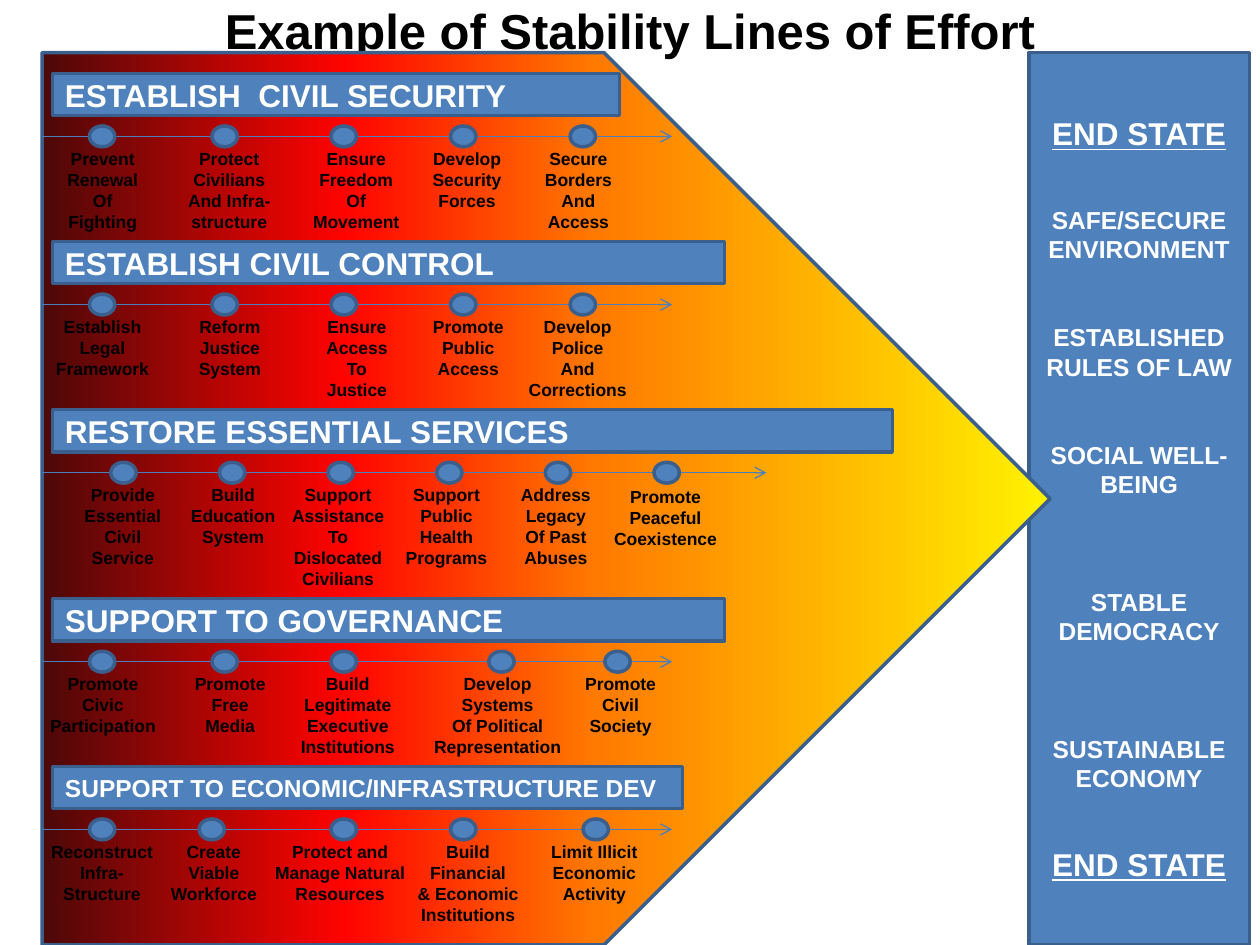
"""Build the slide of stability lines of effort."""
from dataclasses import dataclass

from lxml import etree
from pptx import Presentation
from pptx.dml.color import RGBColor
from pptx.enum.shapes import MSO_CONNECTOR, MSO_SHAPE
from pptx.enum.text import MSO_ANCHOR, MSO_AUTO_SIZE, PP_ALIGN
from pptx.oxml.ns import qn
from pptx.shapes.autoshape import Shape
from pptx.shapes.shapetree import SlideShapes
from pptx.text.text import TextFrame
from pptx.util import Cm, Pt

RECT, OVAL, PENTAGON = MSO_SHAPE.RECTANGLE, MSO_SHAPE.OVAL, MSO_SHAPE.PENTAGON
STRAIGHT = MSO_CONNECTOR.STRAIGHT
LEFT, CENTER = PP_ALIGN.LEFT, PP_ALIGN.CENTER
TOP, MIDDLE = MSO_ANCHOR.TOP, MSO_ANCHOR.MIDDLE
FIT = MSO_AUTO_SIZE.SHAPE_TO_FIT_TEXT

FONT = "Arial"
BLUE, EDGE, THREAD = "4F81BD", "3A5F8C", "4B7EBC"
BLACK, WHITE = "000000", "FFFFFF"
HEAT = [(0, "FFF200"), (45, "FF7A00"), (70, "FF0300"), (100, "4D0808")]

ARROW_LEFT, ARROW_TOP, ARROW_HEIGHT = 0.85, 1.06, 17.99
BAR_LEFT, BAR_HEIGHT = 1.06, 0.85
DOT_WIDTH, DOT_HEIGHT = 0.51, 0.42
LINE_DROP, LABEL_DROP = 1.27, 1.38


@dataclass
class Step:
    """A dot on a line, with the label under it."""
    dot: float
    left: float
    width: float
    text: str
    drop: float = LABEL_DROP


@dataclass
class Effort:
    """A titled line of effort and its steps."""
    top: float
    width: float
    title: str
    steps: list[Step]
    size: int = 18
    length: float = 12.7


@dataclass
class Goal:
    """A paragraph of the end state panel."""
    text: str
    before: float = 0
    size: int = 14
    underline: bool = False


EFFORTS = [
    Effort(1.48, 11.43, "ESTABLISH  CIVIL SECURITY", [
        Step(2.06, 1.09, 1.96, "Prevent\nRenewal\nOf\nFighting"),
        Step(4.53, 3.53, 2.18, "Protect\nCivilians\nAnd Infra-\nstructure"),
        Step(6.93, 6.05, 2.26, "Ensure\nFreedom\nOf\nMovement"),
        Step(9.34, 8.46, 1.91, "Develop\nSecurity\nForces"),
        Step(11.75, 10.72, 1.88, "Secure\nBorders\nAnd\nAccess")]),
    Effort(4.87, 13.55, "ESTABLISH CIVIL CONTROL", [
        Step(2.06, 0.86, 2.41, "Establish\nLegal\nFramework"),
        Step(4.53, 3.76, 1.75, "Reform\nJustice\nSystem"),
        Step(6.93, 6.32, 1.75, "Ensure\nAccess\nTo\nJustice"),
        Step(9.34, 8.46, 1.96, "Promote\nPublic\nAccess"),
        Step(11.75, 10.39, 2.51, "Develop\nPolice\nAnd\nCorrections")]),
    Effort(8.26, 16.93, "RESTORE ESSENTIAL SERVICES", [
        Step(2.49, 1.42, 2.11, "Provide\nEssential\nCivil\nService"),
        Step(4.68, 3.58, 2.24, "Build\nEducation\nSystem"),
        Step(6.87, 5.56, 2.51, "Support\nAssistance\nTo\nDislocated\nCivilians"),
        Step(9.06, 7.92, 2.16, "Support\nPublic\nHealth\nPrograms"),
        Step(11.25, 10.24, 1.93, "Address\nLegacy\nOf Past\nAbuses"),
        Step(13.44, 12.12, 2.59, "Promote\nPeaceful\nCoexistence", 1.42)],
        length=14.6),
    Effort(12.07, 13.55, "SUPPORT TO GOVERNANCE", [
        Step(2.06, 0.74, 2.67, "Promote\nCivic\nParticipation"),
        Step(4.53, 3.61, 2.06, "Promote\nFree\nMedia"),
        Step(6.93, 5.79, 2.44, "Build\nLegitimate\nExecutive\nInstitutions"),
        Step(10.11, 8.43, 3.2, "Develop\nSystems\nOf Political\nRepresentation"),
        Step(12.45, 11.53, 1.96, "Promote\nCivil\nSociety")]),
    Effort(15.45, 12.7, "SUPPORT TO ECONOMIC/INFRASTRUCTURE DEV", [
        Step(2.06, 0.76, 2.59, "Reconstruct\nInfra-\nStructure"),
        Step(4.27, 3.18, 2.26, "Create\nViable\nWorkforce"),
        Step(6.93, 5.28, 3.15, "Protect and\nManage Natural\nResources"),
        Step(9.34, 8.15, 2.57, "Build\nFinancial\n& Economic\nInstitutions"),
        Step(12.01, 10.85, 2.26, "Limit Illicit\nEconomic\nActivity")],
        size=14),
]
GOALS = [
    Goal("END STATE", size=18, underline=True),
    Goal("SAFE/SECURE ENVIRONMENT", 30),
    Goal("ESTABLISHED RULES OF LAW", 33.6),
    Goal("SOCIAL WELL-BEING", 33.6),
    Goal("STABLE", 50.4),
    Goal("DEMOCRACY"),
    Goal("SUSTAINABLE ECONOMY", 50.4),
    Goal("END STATE", 30, 18, True),
]


def color(value: str) -> RGBColor:
    """Turn a hex string into a colour."""
    return RGBColor.from_string(value)


def write(tf: TextFrame, text: str, *, size: int, fill: str = WHITE,
          align: PP_ALIGN = CENTER, anchor: MSO_ANCHOR = MIDDLE, wrap: bool = True,
          before: float = 0, underline: bool = False) -> None:
    """Add one bold paragraph for each line of the text."""
    tf.word_wrap, tf.vertical_anchor = wrap, anchor
    for line in text.split("\n"):
        p = tf.add_paragraph() if tf.text else tf.paragraphs[0]
        p.alignment, p.space_before = align, Pt(before)
        r = p.add_run()
        r.text = line
        r.font.name, r.font.size, r.font.bold = FONT, Pt(size), True
        r.font.underline = underline
        r.font.color.rgb = color(fill)


def add_block(shapes: SlideShapes, kind: MSO_SHAPE, left: float, top: float,
              width: float, height: float) -> Shape:
    """Draw a blue outlined shape."""
    sp = shapes.add_shape(kind, Cm(left), Cm(top), Cm(width), Cm(height))
    sp.shadow.inherit = False
    sp.fill.solid()
    sp.fill.fore_color.rgb = color(BLUE)
    sp.line.color.rgb = color(EDGE)
    sp.line.width = Pt(2)
    return sp


def add_heat_arrow(shapes: SlideShapes) -> None:
    """Draw the big pentagon with its gradient."""
    sp = add_block(shapes, PENTAGON, ARROW_LEFT, ARROW_TOP, 20.32, ARROW_HEIGHT)
    sp.fill.gradient()
    sp.fill.gradient_angle = 180
    stops = sp.element.spPr.find(qn("a:gradFill")).find(qn("a:gsLst"))
    stops[:] = []
    for position, value in HEAT:
        gs = etree.SubElement(stops, qn("a:gs"), pos=str(position * 1000))
        etree.SubElement(gs, qn("a:srgbClr"), val=value)


def add_thread(shapes: SlideShapes, y: float, length: float) -> None:
    """Draw the thin arrow that carries the dots."""
    cxn = shapes.add_connector(STRAIGHT, Cm(ARROW_LEFT), Cm(y),
                               Cm(ARROW_LEFT + length), Cm(y))
    cxn.line.color.rgb = color(THREAD)
    cxn.line.width = Pt(0.75)
    sp_pr = cxn.element.spPr
    etree.SubElement(sp_pr.find(qn("a:ln")), qn("a:tailEnd"), type="arrow")
    etree.SubElement(sp_pr, qn("a:effectLst"))


def add_effort(shapes: SlideShapes, effort: Effort) -> None:
    """Draw a title bar and the group of steps below it."""
    bar = add_block(shapes, RECT, BAR_LEFT, effort.top, effort.width, BAR_HEIGHT)
    write(bar.text_frame, effort.title, size=effort.size, align=LEFT)
    group = shapes.add_group_shape().shapes
    y = effort.top + LINE_DROP
    add_thread(group, y, effort.length)
    for step in effort.steps:
        add_block(group, OVAL, step.dot - DOT_WIDTH / 2, y - DOT_HEIGHT / 2,
                  DOT_WIDTH, DOT_HEIGHT)
        height = 0.25 + 0.42 * len(step.text.split("\n"))
        label = group.add_textbox(Cm(step.left), Cm(effort.top + step.drop),
                                  Cm(step.width), Cm(height))
        label.text_frame.auto_size = FIT
        write(label.text_frame, step.text, size=10, fill=BLACK, anchor=TOP, wrap=False)


def main() -> None:
    """Build and save the slide."""
    prs = Presentation()
    prs.slide_width, prs.slide_height = Cm(25.4), Cm(19.05)
    s = prs.slides.add_slide(prs.slide_layouts[6])
    panel = add_block(s.shapes, RECT, 20.74, ARROW_TOP, 4.45, ARROW_HEIGHT)
    for goal in GOALS:
        write(panel.text_frame, goal.text, size=goal.size, before=goal.before,
              underline=goal.underline)
    title = s.shapes.add_textbox(Cm(1.27), Cm(0), Cm(22.86), Cm(1.2))
    write(title.text_frame, "Example of Stability Lines of Effort", size=28, fill=BLACK)
    add_heat_arrow(s.shapes)
    for effort in EFFORTS:
        add_effort(s.shapes, effort)
    prs.save("out.pptx")


if __name__ == "__main__":
    main()
